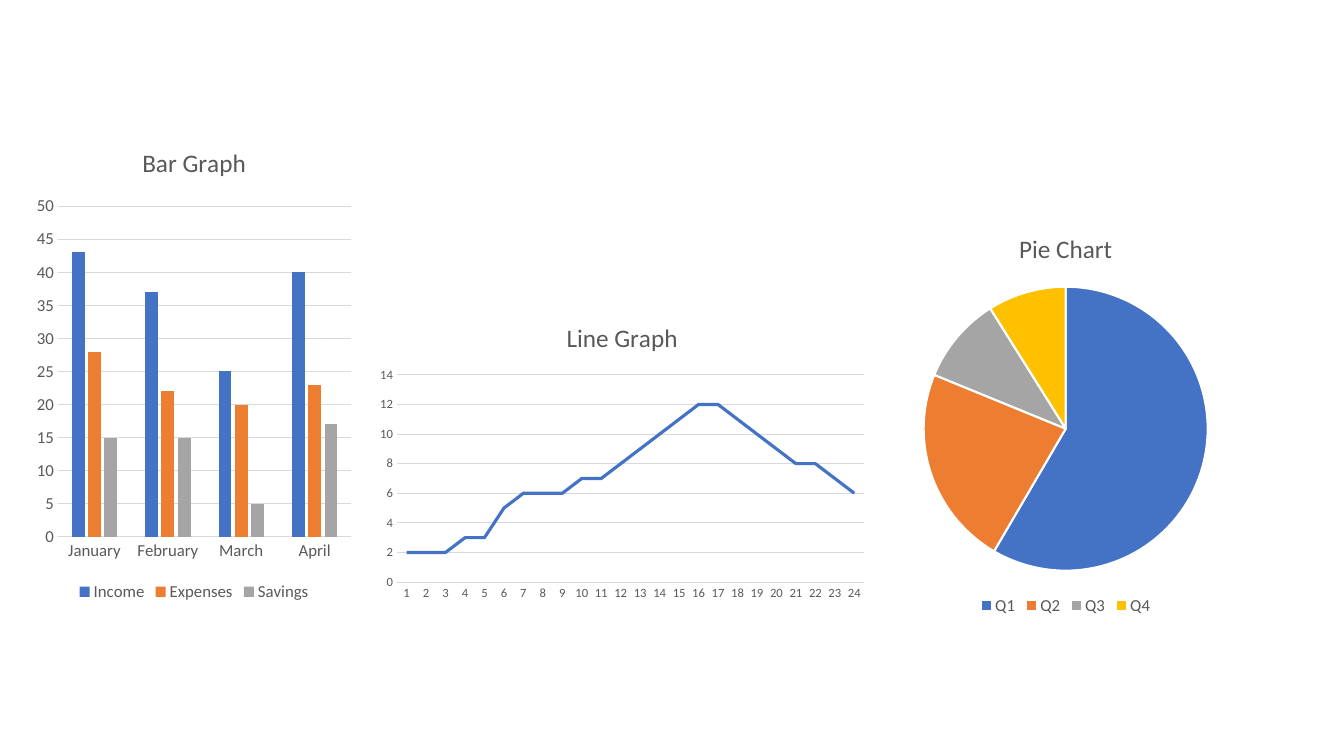
from dataclasses import dataclass

from pptx import Presentation
from pptx.chart.chart import Chart
from pptx.chart.data import CategoryChartData
from pptx.dml.color import RGBColor
from pptx.enum.chart import XL_CHART_TYPE, XL_LEGEND_POSITION, XL_TICK_MARK
from pptx.util import Inches, Pt

COLUMN = XL_CHART_TYPE.COLUMN_CLUSTERED
LINE = XL_CHART_TYPE.LINE
PIE = XL_CHART_TYPE.PIE
BOTTOM = XL_LEGEND_POSITION.BOTTOM
NO_TICK = XL_TICK_MARK.NONE


@dataclass(frozen=True)
class Theme:
    font: str = "Calibri"
    text: RGBColor = RGBColor(0x59, 0x59, 0x59)
    grid: RGBColor = RGBColor(0xD9, 0xD9, 0xD9)
    white: RGBColor = RGBColor(0xFF, 0xFF, 0xFF)
    accents: tuple[RGBColor, ...] = (
        RGBColor(0x44, 0x72, 0xC4),
        RGBColor(0xED, 0x7D, 0x31),
        RGBColor(0xA5, 0xA5, 0xA5),
        RGBColor(0xFF, 0xC0, 0x00),
    )
    title_size: int = 18
    label_size: int = 12
    small_size: int = 9
    hairline: float = 0.75
    slice_line: float = 1.5
    curve: float = 2.25


@dataclass(frozen=True)
class ChartSpec:
    title: str
    kind: XL_CHART_TYPE
    box: tuple[float, float, float, float]
    categories: list[str]
    series: dict[str, list[int]]
    legend: bool = True


THEME = Theme()

CHARTS = [
    ChartSpec("Bar Graph", COLUMN, (0.3, 1.25, 3.25, 4.76),
              ["January", "February", "March", "April"],
              {"Income": [43, 37, 25, 40],
               "Expenses": [28, 22, 20, 23],
               "Savings": [15, 15, 5, 17]}),
    ChartSpec("Line Graph", LINE, (3.67, 3.02, 5, 3),
              [str(n) for n in range(1, 25)],
              {"Series 1": [2, 2, 2, 3, 3, 5, 6, 6, 6, 7, 7, 8,
                            9, 10, 11, 12, 12, 11, 10, 9, 8, 8, 7, 6]},
              legend=False),
    ChartSpec("Pie Chart", PIE, (8.01, 2.12, 5.12, 4.03),
              ["Q1", "Q2", "Q3", "Q4"],
              {"Series 1": [59, 23, 10, 9]}),
]


def style_font(font, size: float) -> None:
    font.name = THEME.font
    font.size = Pt(size)
    font.bold = False
    font.color.rgb = THEME.text


def style_line(line, color: RGBColor, width: float) -> None:
    line.color.rgb = color
    line.width = Pt(width)


def style_axes(chart: Chart, size: float) -> None:
    cat, val = chart.category_axis, chart.value_axis
    for axis in (cat, val):
        axis.major_tick_mark = axis.minor_tick_mark = NO_TICK
        style_font(axis.tick_labels.font, size)
    style_line(cat.format.line, THEME.grid, THEME.hairline)
    val.format.line.fill.background()
    val.has_major_gridlines = True
    style_line(val.major_gridlines.format.line, THEME.grid, THEME.hairline)


def style_series(chart: Chart, kind: XL_CHART_TYPE) -> None:
    plot = chart.plots[0]
    plot.vary_by_categories = kind == PIE
    if kind == PIE:
        series = plot.series[0]
        for i, _ in enumerate(series.values):
            fmt = series.points[i].format
            fmt.fill.solid()
            fmt.fill.fore_color.rgb = THEME.accents[i]
            style_line(fmt.line, THEME.white, THEME.slice_line)
        return
    for series, color in zip(plot.series, THEME.accents):
        if kind == LINE:
            series.smooth = False
            style_line(series.format.line, color, THEME.curve)
        else:
            series.format.fill.solid()
            series.format.fill.fore_color.rgb = color
    if kind == COLUMN:
        plot.gap_width = 219
        plot.overlap = -27


def add_chart(slide, spec: ChartSpec) -> None:
    data = CategoryChartData()
    data.categories = spec.categories
    for name, values in spec.series.items():
        data.add_series(name, values)
    box = [Inches(v) for v in spec.box]
    chart = slide.shapes.add_chart(spec.kind, *box, data).chart
    style_font(chart.font, THEME.label_size)

    # Title
    chart.has_title = True
    tf = chart.chart_title.text_frame
    tf.text = spec.title
    style_font(tf.paragraphs[0].font, THEME.title_size)
    chart.chart_title.include_in_layout = False

    # Legend
    chart.has_legend = spec.legend
    if spec.legend:
        chart.legend.position = BOTTOM
        chart.legend.include_in_layout = False
        style_font(chart.legend.font, THEME.label_size)

    # Axes and data
    if spec.kind != PIE:
        style_axes(chart, THEME.small_size if spec.kind == LINE else THEME.label_size)
    style_series(chart, spec.kind)


def main() -> None:
    prs = Presentation()
    prs.slide_width, prs.slide_height = Inches(13.33), Inches(7.5)
    slide = prs.slides.add_slide(prs.slide_layouts[6])
    for spec in CHARTS:
        add_chart(slide, spec)
    prs.save("out.pptx")


if __name__ == "__main__":
    main()
